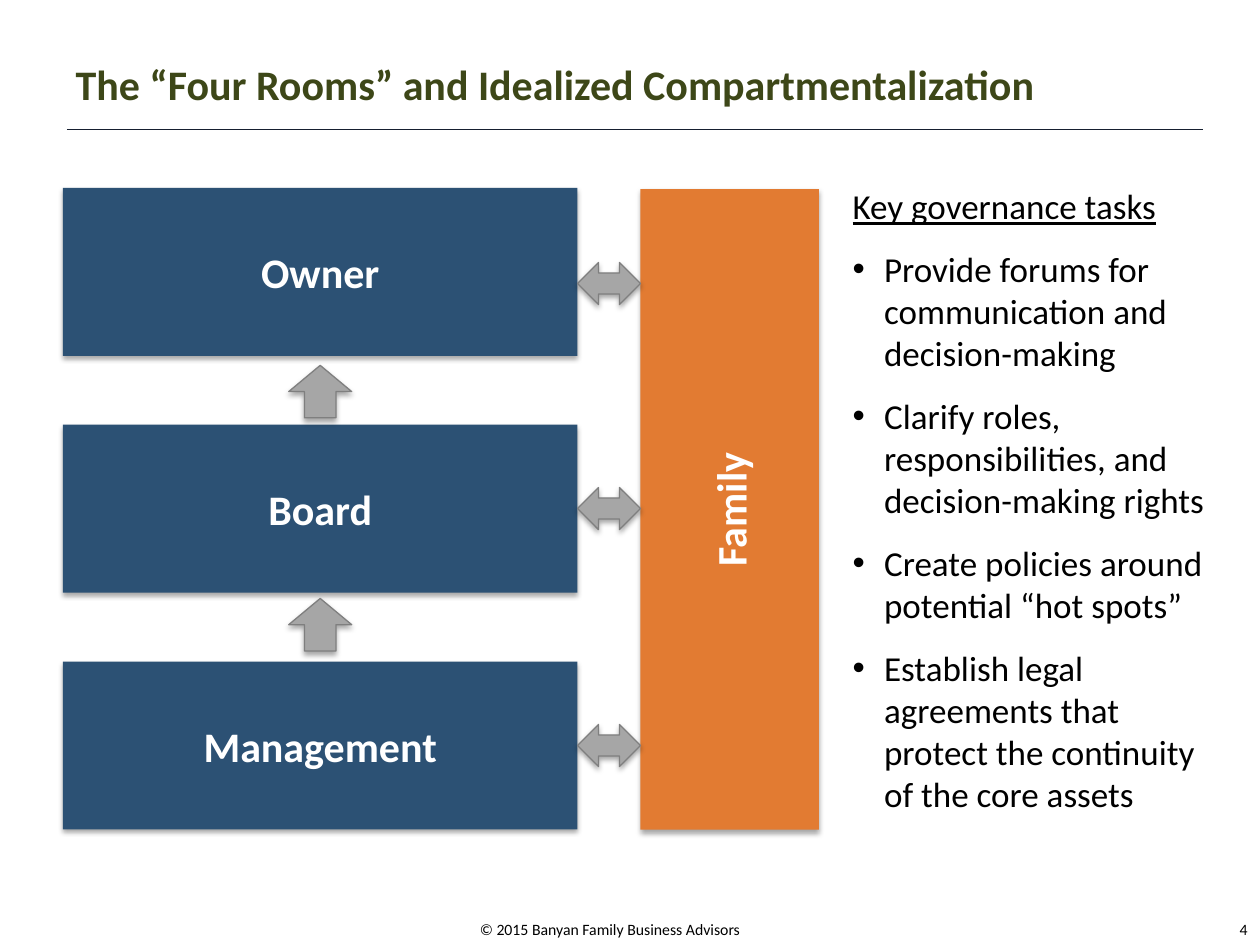
from lxml import etree
from pptx import Presentation
from pptx import util as u
from pptx.dml.color import RGBColor
from pptx.enum import shapes, text
from pptx.oxml.ns import qn

NAVY, ORANGE, GREY, DARK_GREY = "2C5174", "E27B32", "A6A6A6", "7F7F7F"
OLIVE, RULE, BLACK, WHITE = "3D4718", "161F30", "000000", "FFFFFF"


def rgb(value):
    return RGBColor.from_string(value)


def box(left, top, width, height):
    return u.Pt(left), u.Pt(top), u.Pt(width), u.Pt(height)


class Deck:
    font = "Calibri"

    def __init__(self):
        self.prs = Presentation()
        self.prs.slide_width, self.prs.slide_height = u.Pt(720), u.Pt(540)
        self.slide = self.prs.slides.add_slide(self.prs.slide_layouts[1])

    def run(self, paragraph, words, size, color, bold=False, underline=False):
        run = paragraph.add_run()
        run.text = words
        font = run.font
        font.name, font.size = self.font, u.Pt(size)
        font.bold, font.underline = bold, underline
        font.color.rgb = rgb(color)

    def place(self, holder, area):
        holder.left, holder.top, holder.width, holder.height = box(*area)
        frame = holder.text_frame
        frame.word_wrap = True
        frame.auto_size = text.MSO_AUTO_SIZE.NONE
        return frame

    def title(self, words, area):
        frame = self.place(self.slide.shapes.title, area)
        frame.vertical_anchor = text.MSO_ANCHOR.MIDDLE
        heading = frame.paragraphs[0]
        heading.alignment = text.PP_ALIGN.LEFT
        self.run(heading, words, 24, OLIVE, bold=True)

    def tasks(self, heading, items, area):
        frame = self.place(self.slide.placeholders[1], area)
        frame.vertical_anchor = text.MSO_ANCHOR.TOP
        first = frame.paragraphs[0]
        self.bullet(first, None, 0)
        first.space_before = u.Pt(0)
        self.run(first, heading, 20, BLACK, underline=True)
        for item in items:
            task = frame.add_paragraph()
            self.bullet(task, "•", 18)
            task.space_before = u.Pt(12)
            self.run(task, item, 20, BLACK)

    def bullet(self, paragraph, mark, indent):
        props = paragraph._p.get_or_add_pPr()
        props.set("marL", str(u.Pt(indent)))
        props.set("indent", str(u.Pt(-indent)))
        if mark:
            etree.SubElement(props, qn("a:buFont"), typeface="Arial")
            etree.SubElement(props, qn("a:buChar"), char=mark)
        else:
            etree.SubElement(props, qn("a:buNone"))

    def label(self, words, area, align, anchor, wrap=True):
        frame = self.slide.shapes.add_textbox(*box(*area)).text_frame
        frame.word_wrap = wrap
        frame.vertical_anchor = anchor
        frame.paragraphs[0].alignment = align
        self.run(frame.paragraphs[0], words, 9, BLACK)

    def rule(self, left, right, y):
        line = self.slide.shapes.add_connector(
            shapes.MSO_CONNECTOR.STRAIGHT, u.Pt(left), u.Pt(y), u.Pt(right), u.Pt(y))
        line.line.color.rgb = rgb(RULE)
        line.line.width = u.Pt(0.75)
        etree.SubElement(line._element.spPr, qn("a:effectLst"))

    def shape(self, kind, area, fill):
        shape = self.slide.shapes.add_shape(kind, *box(*area))
        shape.fill.solid()
        shape.fill.fore_color.rgb = rgb(fill)
        shape.line.fill.background()
        self.soft_shadow(shape)
        return shape

    def soft_shadow(self, shape):
        shape.shadow.inherit = False
        effects = shape._element.spPr.find(qn("a:effectLst"))
        shadow = etree.SubElement(
            effects, qn("a:outerShdw"), blurRad=str(u.Pt(3.1)), dist=str(u.Pt(1.8)),
            dir="5400000", rotWithShape="0")
        color = etree.SubElement(shadow, qn("a:srgbClr"), val=BLACK)
        etree.SubElement(color, qn("a:alpha"), val="35000")

    def room(self, name, area, fill, rotation=0):
        room = self.shape(shapes.MSO_SHAPE.RECTANGLE, area, fill)
        room.rotation = rotation
        frame = room.text_frame
        frame.word_wrap = True
        frame.vertical_anchor = text.MSO_ANCHOR.MIDDLE
        frame.paragraphs[0].alignment = text.PP_ALIGN.CENTER
        self.run(frame.paragraphs[0], name, 24, WHITE, bold=True)

    def arrow(self, kind, area):
        arrow = self.shape(kind, area, GREY)
        arrow.line.color.rgb = rgb(DARK_GREY)
        arrow.line.width = u.Pt(0.75)


def main():
    deck = Deck()
    deck.title("The “Four Rooms” and Idealized Compartmentalization", (36, 21.6, 648, 52.6))
    deck.rule(38.2, 687.5, 74.1)
    deck.label("© 2015 Banyan Family Business Advisors", (267.1, 522, 166.3, 18),
               text.PP_ALIGN.LEFT, text.MSO_ANCHOR.TOP, wrap=False)
    deck.label("4", (552, 511.2, 168, 28.8), text.PP_ALIGN.RIGHT, text.MSO_ANCHOR.BOTTOM)
    deck.tasks("Key governance tasks", [
        "Provide forums for communication and decision-making",
        "Clarify roles, responsibilities, and decision-making rights",
        "Create policies around potential “hot spots”",
        "Establish legal agreements that protect the continuity of the core assets",
    ], (480, 102, 216, 371))

    room_left, room_top, room_width, room_height, pitch = 36, 107.4, 294, 96, 135.3
    for row, name in enumerate(["Owner", "Board", "Management"]):
        deck.room(name, (room_left, room_top + row * pitch, room_width, room_height), NAVY)
    deck.room("Family", (234, 240, 366, 102), ORANGE, rotation=270)

    for top in (208.8, 342):
        deck.arrow(shapes.MSO_SHAPE.UP_ARROW,
                   (room_left + room_width / 2 - 18, top, 36, 30))
    for top in (150, 278.6, 414):
        deck.arrow(shapes.MSO_SHAPE.LEFT_RIGHT_ARROW,
                   (room_left + room_width, top, 36, 24))
    deck.prs.save("out.pptx")


if __name__ == "__main__":
    main()
